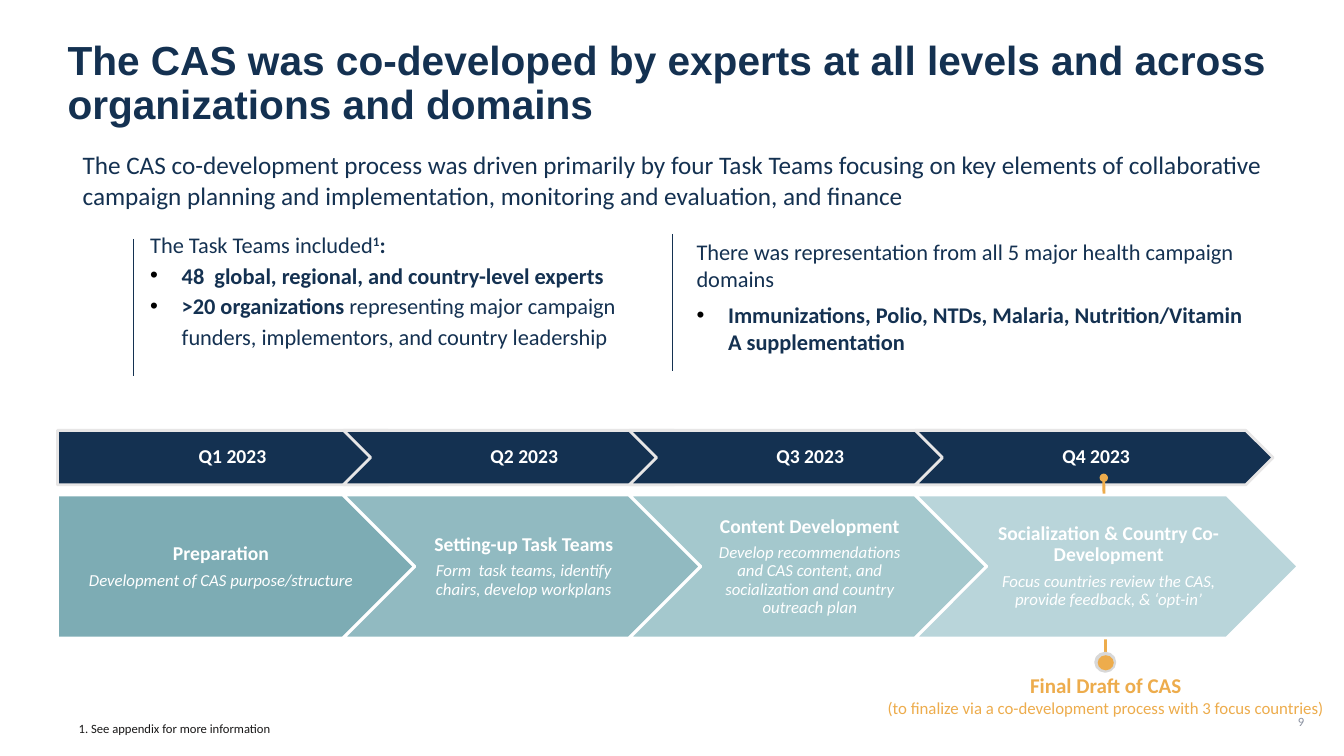
"""Build the slide on how the CAS was co-developed, with its 2023 timeline."""
from dataclasses import dataclass

from lxml.etree import SubElement
from pptx import Presentation
from pptx.dml.color import RGBColor
from pptx.enum.shapes import MSO_CONNECTOR as Connector, MSO_SHAPE as Shape
from pptx.enum.text import MSO_ANCHOR as Anchor, MSO_AUTO_SIZE as AutoSize, PP_ALIGN as Align
from pptx.oxml.ns import qn
from pptx.util import Inches, Pt

COLOURS = {
    "navy": "143151", "white": "FFFFFF", "silver": "E7E6E6", "grey": "D8D8D8",
    "gold": "EDAC4C", "ink": "181717", "muted": "8A91A0", "black": "000000",
    "teal1": "7DACB4", "teal2": "91BAC1", "teal3": "A4C8CD", "teal4": "B9D5DA",
}
COLUMNS, ROWS = 160, 90
INSETS = (1.2, 0.6, 1.2, 0.6)


@dataclass
class Line:
    """One paragraph: spans of (text, size, marks), where marks are b, i and ^."""
    spans: list
    after: float = 0
    bullet: bool = False


class SlideBuilder:
    """Draws styled elements on a page measured in grid columns and rows."""

    def __init__(self, deck, layout):
        self.page = deck.slides.add_slide(deck.slide_layouts[layout])
        self.column = deck.slide_width / COLUMNS
        self.row = deck.slide_height / ROWS
        self.font = "Calibri"

    def place(self, left, top, width, height):
        return (round(left * self.column), round(top * self.row),
                round(width * self.column), round(height * self.row))

    def colour(self, name):
        return RGBColor.from_string(COLOURS[name])

    def set_lines(self, box, lines, colour, align=Align.LEFT, anchor=Anchor.TOP,
                  spacing=1.0, insets=INSETS, font=None):
        frame = box.text_frame
        frame.word_wrap = True
        frame.auto_size = AutoSize.NONE
        frame.vertical_anchor = anchor
        (frame.margin_left, frame.margin_top,
         frame.margin_right, frame.margin_bottom) = self.place(*insets)
        for index, line in enumerate(lines):
            para = frame.add_paragraph() if index else frame.paragraphs[0]
            para.alignment = align
            para.line_spacing = spacing
            para.space_before, para.space_after = Pt(0), Pt(line.after)
            self.indent(para, line.bullet)
            for text, size, marks in line.spans:
                span = para.add_run()
                span.text = text
                span.font.name = font or self.font
                span.font.size = Pt(size)
                span.font.bold = "b" in marks
                span.font.italic = "i" in marks
                span.font.color.rgb = self.colour(colour)
                if "^" in marks:
                    span._r.get_or_add_rPr().set("baseline", "30000")

    def indent(self, para, bullet):
        properties = para._p.get_or_add_pPr()
        hang = round(3.75 * self.column) if bullet else 0
        properties.set("marL", str(hang))
        properties.set("indent", str(-hang))
        if bullet:
            tint = SubElement(properties, qn("a:buClr"))
            SubElement(tint, qn("a:srgbClr"), val=COLOURS["black"])
            SubElement(properties, qn("a:buFont"), typeface="Arial")
            SubElement(properties, qn("a:buChar"), char="•")
        else:
            SubElement(properties, qn("a:buNone"))

    def placeholder(self, index, area, lines, colour, **style):
        box = self.page.placeholders[index]
        box.left, box.top, box.width, box.height = self.place(*area)
        self.set_lines(box, lines, colour, **style)

    def text(self, area, lines, colour, **style):
        self.set_lines(self.page.shapes.add_textbox(*self.place(*area)), lines, colour, **style)

    def shape(self, kind, area, fill, outline=None):
        shape = self.page.shapes.add_shape(kind, *self.place(*area))
        shape.shadow.inherit = False
        shape.fill.solid()
        shape.fill.fore_color.rgb = self.colour(fill)
        if outline:
            shape.line.color.rgb = self.colour(outline)
            shape.line.width = Pt(2)
        else:
            shape.line.fill.background()
        return shape

    def arrow(self, index, area, fill, outline, lines):
        kind = Shape.CHEVRON if index else Shape.PENTAGON
        arrow = self.shape(kind, area, fill, outline)
        arrow.adjustments[0] = 0.5
        insets = (0.72 if index else 0.96, 0.48, 0.24, 0.48)
        self.set_lines(arrow, lines, "white", align=Align.CENTER, anchor=Anchor.MIDDLE,
                       spacing=0.9, insets=insets)

    def line(self, start, end, colour, width, head=None):
        points = self.place(*start, *end)
        line = self.page.shapes.add_connector(Connector.STRAIGHT, *points)
        line.line.color.rgb = self.colour(colour)
        line.line.width = Pt(width)
        properties = line._element.spPr
        if head:
            SubElement(properties.find(qn("a:ln")), qn("a:headEnd"), type=head)
        SubElement(properties, qn("a:effectLst"))


def main():
    deck = Presentation()
    deck.slide_width, deck.slide_height = Inches(13.33), Inches(7.5)
    slide = SlideBuilder(deck, 3)

    slide.placeholder(0, (6.84, 4.2, 155.64, 9.12), [Line([(
        "The CAS was co-developed by experts at all levels and across organizations and domains",
        29, "b")])], "navy", spacing=0.9, font="Arial")
    slide.placeholder(1, (16.68, 26.4, 62.76, 15.6), [
        Line([("The Task Teams included", 16, ""), ("1", 16, "b^"), (":", 16, "b")]),
        Line([("48  global, regional, and country-level experts", 16, "b")], bullet=True),
        Line([(">20 organizations ", 16, "b"),
              ("representing major campaign funders, implementors, and country leadership", 16, "")],
             bullet=True),
    ], "navy", spacing=1.15)
    slide.placeholder(2, (81.72, 27.72, 67.44, 12.3), [
        Line([("There was representation from all 5 major health campaign domains", 16, "")], after=7),
        Line([("Immunizations, Polio, NTDs, Malaria, Nutrition/Vitamin A supplementation", 16, "b")],
             bullet=True),
    ], "navy")
    slide.text((8.64, 17.52, 142.8, 7.8), [Line([(
        "The CAS co-development process was driven primarily by four Task Teams focusing on key "
        "elements of collaborative campaign planning and implementation, monitoring and "
        "evaluation, and finance", 18, "")])], "navy", anchor=Anchor.MIDDLE)
    for left, top in ((15.84, 28.44), (80.04, 27.84)):
        slide.line((left, top), (left, top + 16.32), "navy", 0.75)

    stages = [
        ("Preparation", "Development of CAS purpose/structure"),
        ("Setting-up Task Teams", "Form  task teams, identify chairs, develop workplans"),
        ("Content Development", "Develop recommendations and CAS content, and socialization "
                                "and country outreach plan"),
        ("Socialization & Country Co-Development",
         "Focus countries review the CAS, provide feedback, & ‘opt-in’"),
    ]
    lefts = [6.84 + 34.04 * index for index in range(len(stages))]
    for index, left in enumerate(lefts):
        slide.arrow(index, (left, 51.24, 42.6, 6.48), "navy", "silver",
                    [Line([(f"Q{index + 1} 2023", 14, "b")], after=5)])
    slide.line((131.4, 56.88), (131.64, 79.56), "gold", 2, head="oval")
    for index, (left, (name, detail)) in enumerate(zip(lefts, stages)):
        width = 45.6 if index == len(stages) - 1 else 42.5
        slide.arrow(index, (left, 58.92, width, 17.04), f"teal{index + 1}", "white",
                    [Line([(name, 14, "b")], after=5), Line([(detail, 12, "i")], after=4)])

    slide.shape(Shape.OVAL, (130.44, 77.76, 2.28, 2.16), "grey", "grey")
    slide.shape(Shape.OVAL, (130.68, 78, 1.92, 1.8), "gold")
    slide.text((103.08, 79.44, 57.12, 6.72), [
        Line([("Final Draft of CAS", 15, "b")]),
        Line([("(to finalize via a co-development process with 3 focus countries)", 12, "")]),
    ], "gold", align=Align.CENTER)
    slide.text((4.2, 84.12, 33.12, 5.28), [Line([("1. See appendix for more information", 9, "")])],
               "ink", align=Align.CENTER, anchor=Anchor.MIDDLE)
    slide.text((149.52, 83.52, 6.96, 4.8), [Line([("9", 9, "")])],
               "muted", align=Align.RIGHT, anchor=Anchor.MIDDLE)
    deck.save("out.pptx")


if __name__ == "__main__":
    main()
